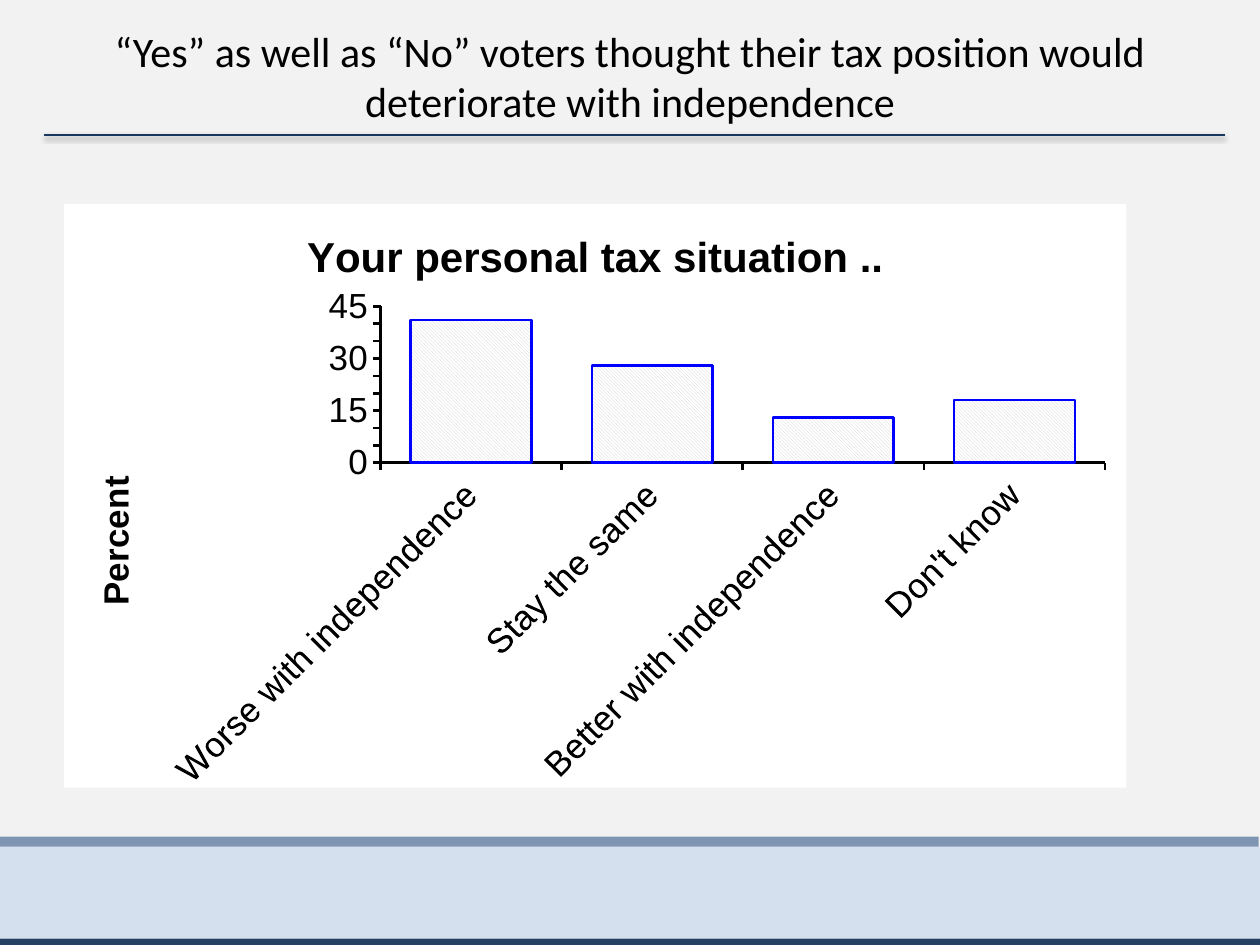
import pptx
import pptx.chart.data
import pptx.dml.color
import pptx.enum.chart
import pptx.enum.dml
import pptx.enum.shapes
import pptx.enum.text
import pptx.oxml
import pptx.oxml.ns
import pptx.util

RGB = pptx.dml.color.RGBColor
BACKGROUND = RGB(0xF2, 0xF2, 0xF2)
NAVY = RGB(0x25, 0x40, 0x61)
BLUE = RGB(0x1F, 0x49, 0x7D)
PALE_BLUE = RGB(0x8E, 0xB4, 0xE3)
RULE = RGB(0x17, 0x37, 0x5E)
BAR_LINE = RGB(0, 0, 0xFF)
HATCH = RGB(0xD0, 0xD0, 0xD0)
WHITE = RGB(0xFF, 0xFF, 0xFF)
BLACK = RGB(0, 0, 0)
NS = pptx.oxml.ns.nsdecls("a", "c")
Pt = pptx.util.Pt


def inches(*lengths):
    """Convert lengths in inches to slide units."""
    return [pptx.util.Inches(v) for v in lengths]


def add_band(slide, box, color, alpha=100):
    """Add a borderless band with an opacity in percent."""
    sp = slide.shapes.add_shape(pptx.enum.shapes.MSO_SHAPE.RECTANGLE, *inches(*box))
    sp.shadow.inherit = False
    sp.fill.solid()
    sp.fill.fore_color.rgb = color
    sp.line.fill.background()
    if alpha < 100:
        clr = sp._element.spPr.find(".//" + pptx.oxml.ns.qn("a:srgbClr"))
        clr.append(pptx.oxml.parse_xml(f'<a:alpha {NS} val="{alpha * 1000}"/>'))


def add_footer(slide, box):
    """Stack the three footer bands inside the box."""
    x, y, w, h = box
    edge = 0.08
    add_band(slide, (x, y + h - edge, w, edge), NAVY)
    add_band(slide, (x - 0.01, y, w, edge), BLUE, 54)
    add_band(slide, (x, y + edge, w, h - 2 * edge), PALE_BLUE, 29)


def add_header(slide, box, text):
    """Fill the title placeholder and draw the shadowed rule below it."""
    x, y, w, h = box
    title = slide.shapes.title
    title.left, title.top, title.width, title.height = inches(*box)
    tf = title.text_frame
    tf.word_wrap = True
    tf.vertical_anchor = pptx.enum.text.MSO_ANCHOR.MIDDLE
    p = tf.paragraphs[0]
    p.alignment = pptx.enum.text.PP_ALIGN.CENTER
    r = p.add_run()
    r.text = text
    r.font.size, r.font.name = Pt(24), "Calibri"
    r.font.color.rgb = BLACK
    line = slide.shapes.add_connector(
        pptx.enum.shapes.MSO_CONNECTOR.STRAIGHT,
        *inches(x + 0.23, y + h, x + w - 0.16, y + h))
    line.line.color.rgb = RULE
    line.line.width = Pt(1)
    line._element.spPr.append(pptx.oxml.parse_xml(
        f'<a:effectLst {NS}><a:outerShdw blurRad="{Pt(3.1)}" dist="{Pt(1.6)}" '
        'dir="5400000" rotWithShape="0"><a:srgbClr val="000000">'
        '<a:alpha val="38000"/></a:srgbClr></a:outerShdw></a:effectLst>'))


def write_title(title, text, size):
    """Write a bold title on a chart or an axis."""
    r = title.text_frame.paragraphs[0].add_run()
    r.text = text
    r.font.size, r.font.name, r.font.bold = Pt(size), "Arial", True
    r.font.color.rgb = BLACK


def style_axis(axis):
    """Give an axis a black line, outer ticks and no gridlines."""
    axis.has_major_gridlines = False
    axis.major_tick_mark = pptx.enum.chart.XL_TICK_MARK.OUTSIDE
    axis.format.line.color.rgb = BLACK
    axis.format.line.width = Pt(1.5)
    axis.tick_labels.font.size = Pt(20)


def add_tax_chart(slide, box):
    """Add the column chart of expected tax positions."""
    data = pptx.chart.data.CategoryChartData()
    data.categories = ["Worse with independence", "Stay the same",
                       "Better with independence", "Don't know"]
    data.add_series("Series 1", (41, 28, 13, 18))
    chart = slide.shapes.add_chart(
        pptx.enum.chart.XL_CHART_TYPE.COLUMN_CLUSTERED, *inches(*box), data).chart
    chart.has_legend = False
    chart.font.size, chart.font.name = Pt(20), "Arial"
    chart.font.color.rgb = BLACK
    chart._chartSpace.find(pptx.oxml.ns.qn("c:txPr")).addprevious(pptx.oxml.parse_xml(
        f'<c:spPr {NS}><a:solidFill><a:srgbClr val="{WHITE}"/></a:solidFill>'
        "<a:ln><a:noFill/></a:ln></c:spPr>"))
    write_title(chart.chart_title, "Your personal tax situation ..", 24)
    chart.chart_title.include_in_layout = False

    category, value = chart.category_axis, chart.value_axis
    style_axis(category)
    style_axis(value)
    category._element.txPr.bodyPr.set("rot", "-2700000")
    value.minimum_scale, value.maximum_scale = 0, 45
    value.major_unit = 5
    write_title(value.axis_title, "Percent", 20)
    body = value.axis_title.text_frame._txBody.bodyPr
    body.set("rot", "-5400000")
    body.set("vert", "horz")

    plot = chart.plots[0]
    plot.gap_width = 50
    plot.vary_by_categories = False
    bars = plot.series[0].format
    bars.fill.patterned()
    bars.fill.pattern = pptx.enum.dml.MSO_PATTERN.DARK_DOWNWARD_DIAGONAL
    bars.fill.fore_color.rgb = HATCH
    bars.fill.back_color.rgb = WHITE
    bars.line.color.rgb = BAR_LINE
    bars.line.width = Pt(1.5)


def main():
    """Build and save the slide."""
    prs = pptx.Presentation()
    prs.slide_width, prs.slide_height = inches(10, 7.5)
    slide = prs.slides.add_slide(prs.slide_layouts[5])
    slide.background.fill.solid()
    slide.background.fill.fore_color.rgb = BACKGROUND
    add_footer(slide, (0, 6.64, 10, 0.89))
    add_header(slide, (0.12, 0.13, 9.76, 0.94),
               "“Yes” as well as “No” voters thought their tax position "
               "would deteriorate with independence")
    add_tax_chart(slide, (0.51, 1.62, 8.43, 4.65))
    prs.save("out.pptx")


if __name__ == "__main__":
    main()
